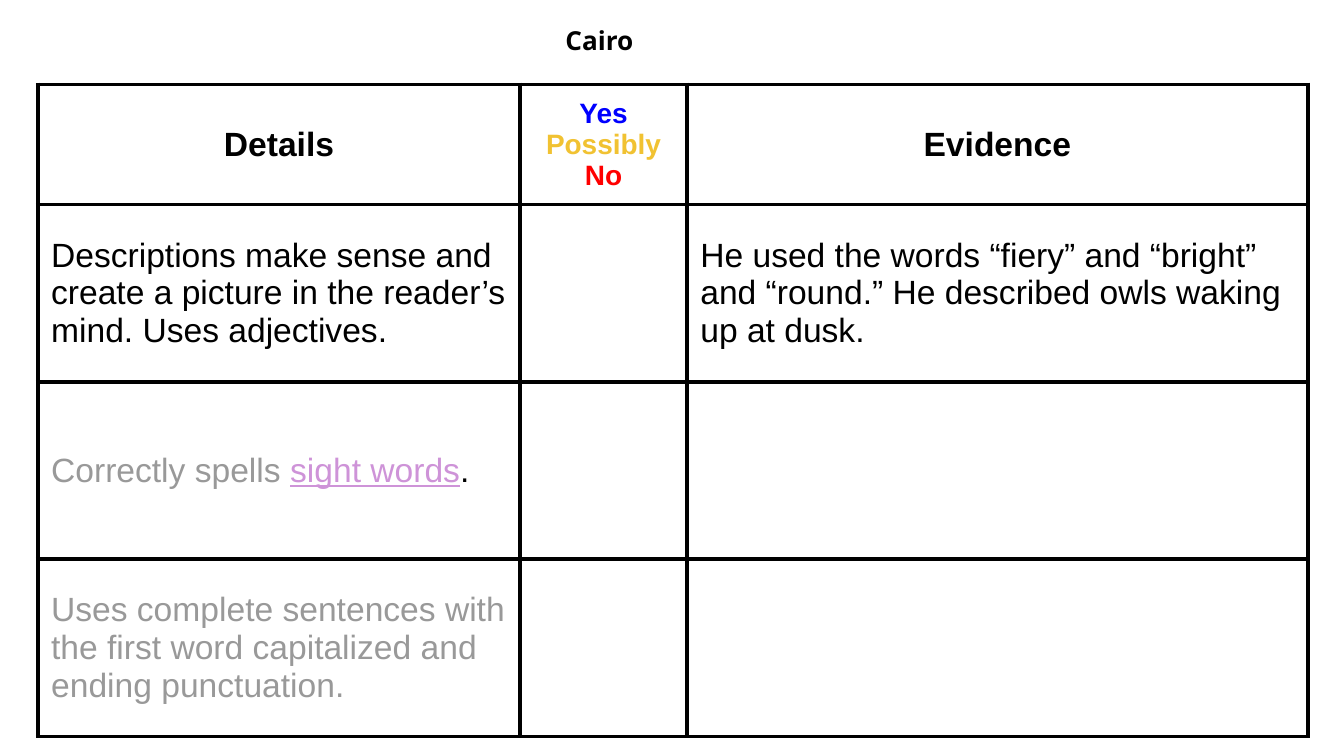
from lxml import etree
from pptx import Presentation
from pptx.dml.color import RGBColor
from pptx.enum import text
from pptx.oxml import ns
from pptx.util import Pt

COLORS = {
    "black": "000000", "gray": "999999", "lilac": "CE93D8",
    "blue": "0000FF", "gold": "F1C232", "red": "FF0000",
}
INSET = Pt(7.2)


def set_insets(target):
    target.margin_left = target.margin_right = INSET
    target.margin_top = target.margin_bottom = INSET


def add_run(paragraph, words, color, size=18, bold=False, underline=False, font="Arial"):
    run = paragraph.add_run()
    run.text = words
    run.font.name = font
    run.font.size = Pt(size)
    run.font.bold = bold
    run.font.underline = underline
    run.font.color.rgb = RGBColor.from_string(COLORS[color])


presentation = Presentation()
presentation.slide_width = Pt(720)
presentation.slide_height = Pt(405)
slide = presentation.slides.add_slide(presentation.slide_layouts[6])

column_widths = [258.5, 89.3, 332.6]
row_heights = [58.3, 95, 95, 95]
shape = slide.shapes.add_table(
    len(row_heights), len(column_widths), Pt(20.2), Pt(45.2),
    Pt(sum(column_widths)), Pt(sum(row_heights)))
table = shape.table
table.first_row = table.horz_banding = False
for column, width in zip(table.columns, column_widths):
    column.width = Pt(width)
for row, height in zip(table.rows, row_heights):
    row.height = Pt(height)

for cell in table.iter_cells():
    set_insets(cell)
    cell.vertical_anchor = text.MSO_ANCHOR.MIDDLE
    properties = cell._tc.get_or_add_tcPr()
    for side in ("a:lnL", "a:lnR", "a:lnT", "a:lnB"):
        line = etree.SubElement(properties, ns.qn(side), w=str(Pt(2.25)))
        fill = etree.SubElement(line, ns.qn("a:solidFill"))
        etree.SubElement(fill, ns.qn("a:srgbClr"), val=COLORS["black"])
    cell.fill.background()

headers = [
    (18, [("Details", "black")]),
    (15, [("Yes", "blue"), ("Possibly", "gold"), ("No", "red")]),
    (18, [("Evidence", "black")]),
]
for column, (size, lines) in enumerate(headers):
    frame = table.cell(0, column).text_frame
    for index, (words, color) in enumerate(lines):
        paragraph = frame.add_paragraph() if index else frame.paragraphs[0]
        paragraph.alignment = text.PP_ALIGN.CENTER
        add_run(paragraph, words, color, size, bold=True)

entries = [
    (1, 0, [("Descriptions make sense and create a picture in the reader’s mind. Uses adjectives.", "black")]),
    (1, 2, [("He used the words “fiery” and “bright” and “round.” He described owls waking up at dusk.", "black")]),
    (2, 0, [("Correctly spells ", "gray"), ("sight words", "lilac"), (".", "black")]),
    (3, 0, [("Uses complete sentences with the first word capitalized and ending punctuation.", "gray")]),
]
for row, column, runs in entries:
    paragraph = table.cell(row, column).text_frame.paragraphs[0]
    for words, color in runs:
        add_run(paragraph, words, color, underline=color == "lilac")

title = slide.shapes.add_textbox(Pt(218.2), Pt(5.8), Pt(205.9), Pt(31.7))
frame = title.text_frame
frame.word_wrap = True
frame.auto_size = text.MSO_AUTO_SIZE.SHAPE_TO_FIT_TEXT
set_insets(frame)
paragraph = frame.paragraphs[0]
paragraph.alignment = text.PP_ALIGN.CENTER
add_run(paragraph, "Cairo", "black", 14, bold=True, font="Open Sans")

presentation.save("out.pptx")
